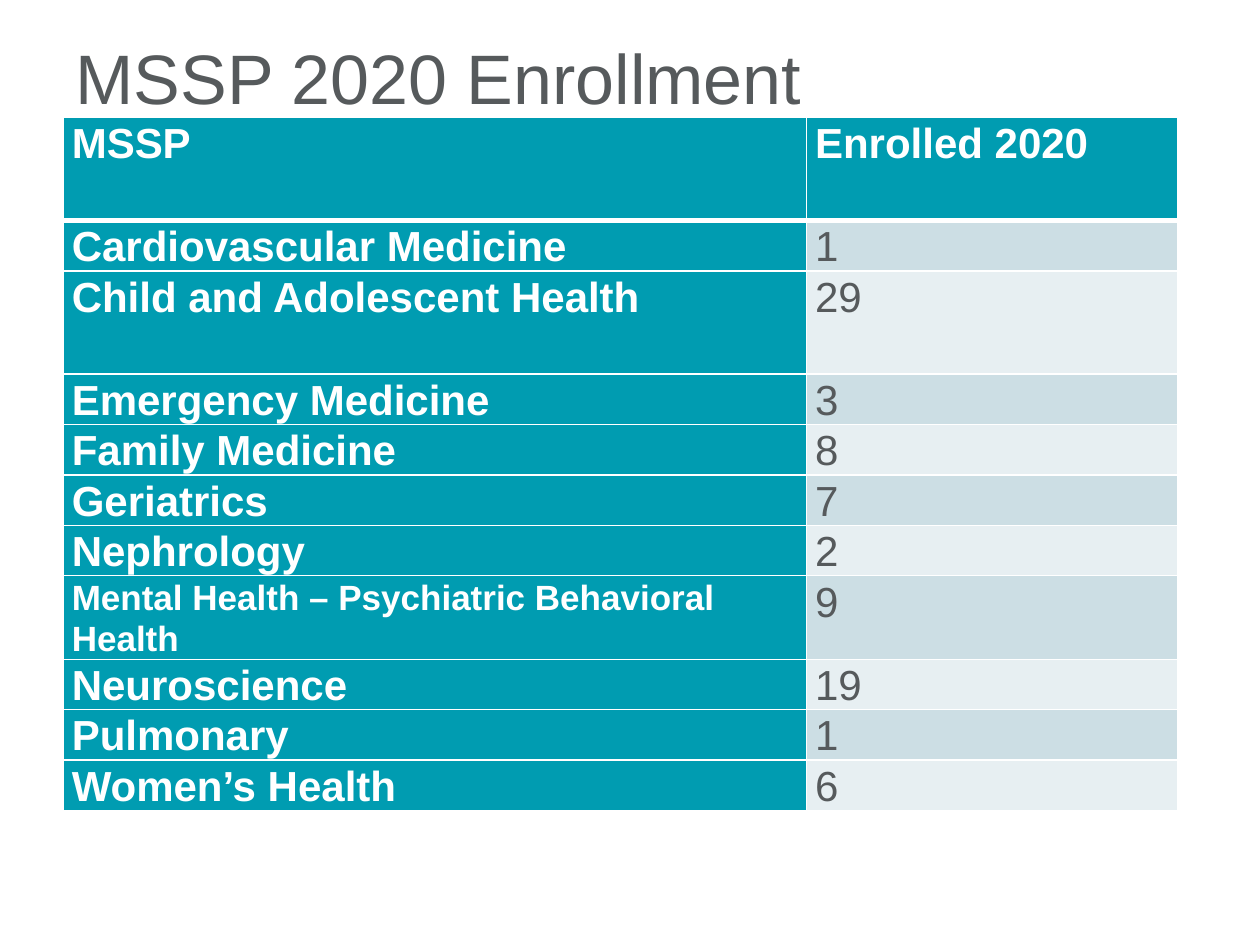
from lxml import etree
from pptx import Presentation, util as u
from pptx.dml.color import RGBColor
from pptx.enum import text
from pptx.oxml import ns

TEAL, GREY, WHITE = "009CB1", "565A5C", "FFFFFF"
BANDS = "CCDEE4", "E7EFF2"
HEADER = "MSSP", "Enrolled 2020"
ENROLLMENT = [
    ("Cardiovascular Medicine", 1),
    ("Child and Adolescent Health", 29),
    ("Emergency Medicine", 3),
    ("Family Medicine", 8),
    ("Geriatrics", 7),
    ("Nephrology", 2),
    ("Mental Health – Psychiatric Behavioral Health", 9),
    ("Neuroscience", 19),
    ("Pulmonary", 1),
    ("Women’s Health", 6),
]
ROW_HEIGHT, TALL_ROW_HEIGHT, TALL_ROWS = 0.4, 0.82, (0, 2)
SMALL_TEXT_ROW = 7


def color(value):
    """Return the colour for a hex string."""
    return RGBColor.from_string(value)


def set_font(p, size, value, bold=False):
    """Format a whole paragraph in Arial."""
    p.font.name, p.font.size, p.font.bold = "Arial", u.Pt(size), bold
    p.font.color.rgb = color(value)


def set_borders(cell, bottom):
    """Draw white one-point borders with the given bottom width."""
    tc_pr = cell._tc.get_or_add_tcPr()
    for side, width in zip("LRTB", (1, 1, 1, bottom)):
        ln = etree.SubElement(tc_pr, ns.qn(f"a:ln{side}"), w=str(u.Pt(width)))
        fill = etree.SubElement(ln, ns.qn("a:solidFill"))
        etree.SubElement(fill, ns.qn("a:srgbClr"), val=WHITE)


def add_title(slide, left, top, width, height):
    """Place the slide title in the given box."""
    sp = slide.shapes.title
    sp.left, sp.top, sp.width, sp.height = map(u.Inches, (left, top, width, height))
    tf = sp.text_frame
    tf.text = "MSSP 2020 Enrollment"
    tf.vertical_anchor = text.MSO_ANCHOR.TOP
    tf.auto_size = text.MSO_AUTO_SIZE.NONE
    p = tf.paragraphs[0]
    p.alignment, p.line_spacing = text.PP_ALIGN.LEFT, 0.9
    set_font(p, 40, GREY)


def fill_cell(cell, value, row, col):
    """Write and format one cell according to its row and column."""
    is_heading = row == 0 or col == 0
    cell.text = str(value)
    cell.margin_left = cell.margin_right = u.Inches(0.07)
    cell.margin_top = cell.margin_bottom = 0
    set_borders(cell, 3 if row == 0 else 1)
    cell.fill.solid()
    cell.fill.fore_color.rgb = color(TEAL if is_heading else BANDS[(row - 1) % 2])
    p = cell.text_frame.paragraphs[0]
    p.line_spacing = 1.07
    size = 20 if (row, col) == (SMALL_TEXT_ROW, 0) else 24
    set_font(p, size, WHITE if is_heading else GREY, is_heading)


def add_enrollment_table(slide, left, top, width, height):
    """Place the enrollment table, its columns split two to one."""
    rows = [HEADER, *ENROLLMENT]
    box = map(u.Inches, (left, top, width, height))
    table = slide.shapes.add_table(len(rows), len(HEADER), *box).table
    table.first_col = True
    for column, share in zip(table.columns, (2, 1)):
        column.width = u.Inches(width * share / 3)
    for i, values in enumerate(rows):
        table.rows[i].height = u.Inches(TALL_ROW_HEIGHT if i in TALL_ROWS else ROW_HEIGHT)
        for j, value in enumerate(values):
            fill_cell(table.cell(i, j), value, i, j)


def main():
    """Build and save the slide."""
    prs = Presentation()
    prs.slide_width, prs.slide_height = u.Inches(10), u.Inches(7.5)
    slide = prs.slides.add_slide(prs.slide_layouts[5])
    add_title(slide, 0.5, 0.3, 6.08, 1.25)
    add_enrollment_table(slide, 0.5, 0.93, 8.85, 5.78)
    prs.save("out.pptx")


if __name__ == "__main__":
    main()
